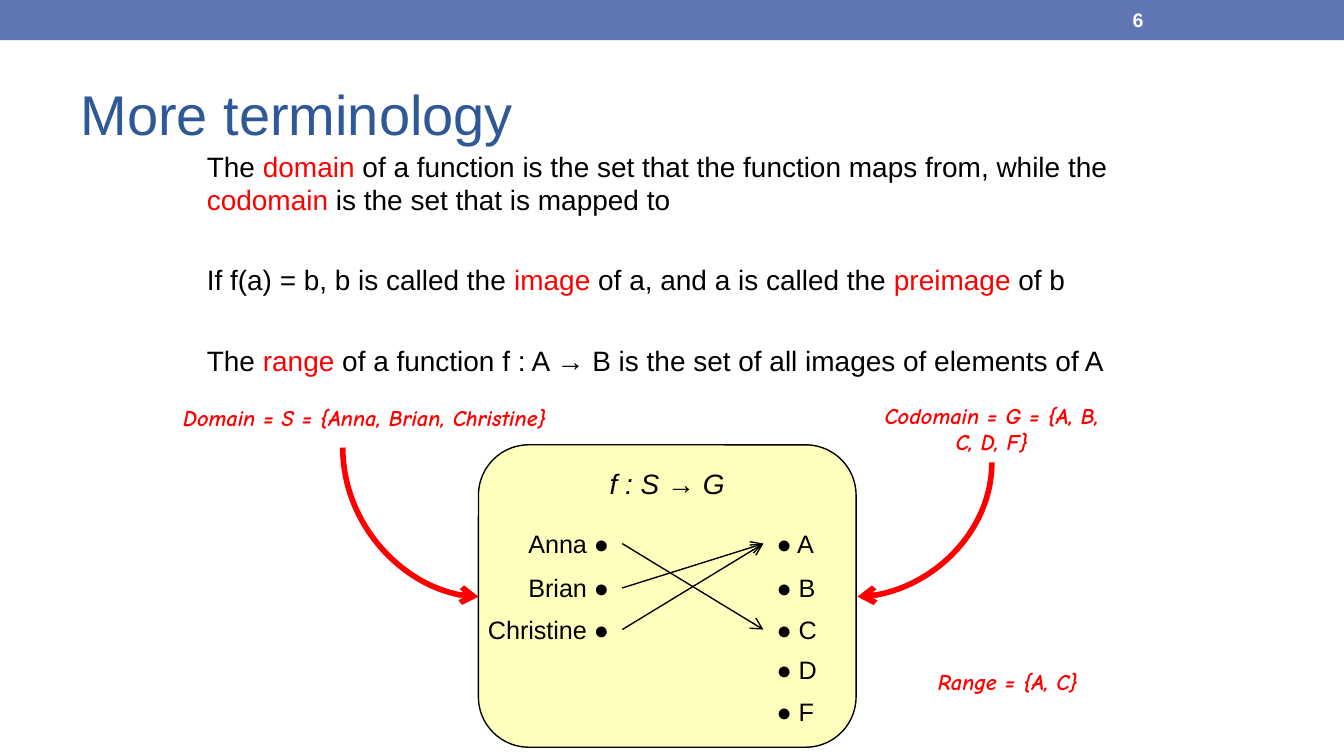
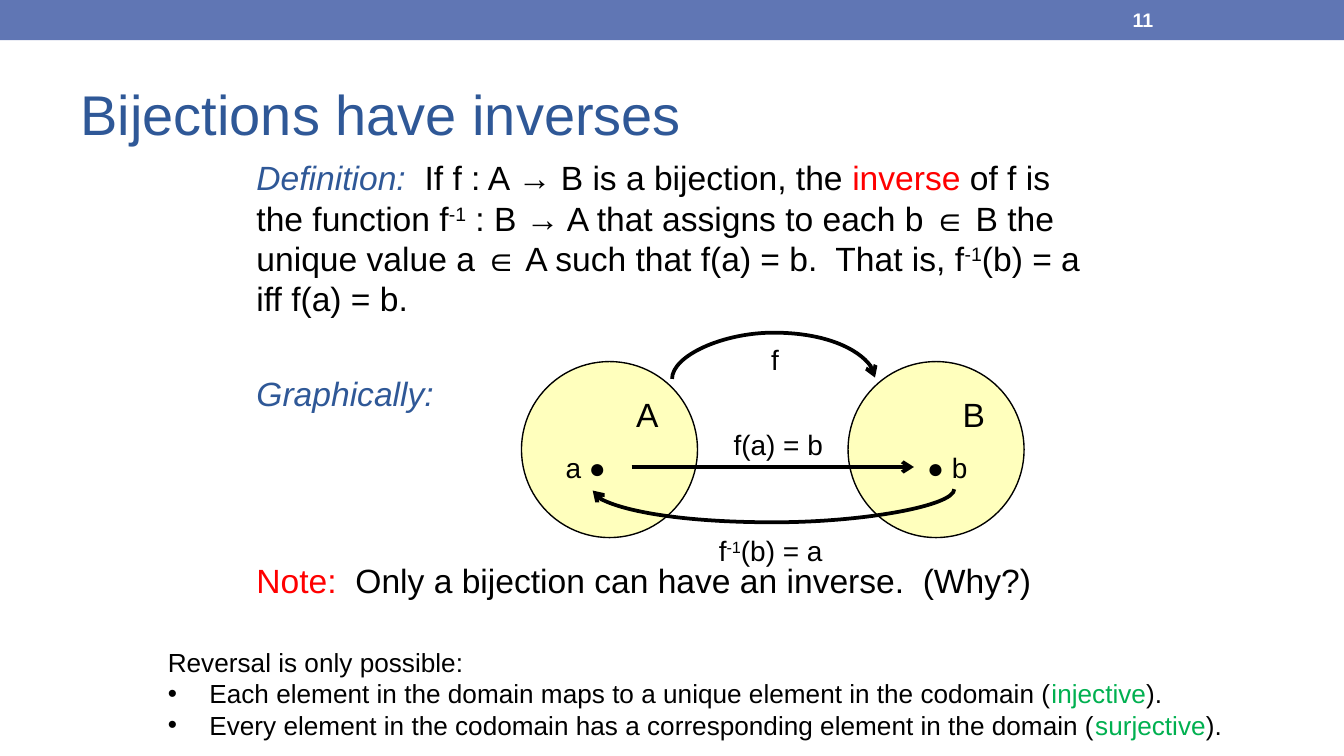
from lxml import etree
from pptx import Presentation
from pptx.dml.color import RGBColor
from pptx.enum.shapes import MSO_CONNECTOR, MSO_SHAPE
from pptx.enum.text import MSO_ANCHOR, MSO_AUTO_SIZE, PP_ALIGN
from pptx.oxml.ns import qn
from pptx.util import Inches, Pt

BLUE = RGBColor(0x2F, 0x58, 0x97)
BAND = RGBColor(0x60, 0x76, 0xB4)
YELLOW = RGBColor(0xFF, 0xFF, 0xBD)
RED = RGBColor(0xFF, 0, 0)
GREEN = RGBColor(0, 0xB0, 0x50)
BLACK = RGBColor(0, 0, 0)
WHITE = RGBColor(0xFF, 0xFF, 0xFF)

SUP = "sup"
TERMS = [
    (3.6, ["The ", ("domain ", RED),
           "of a function is the set that the function maps from, while the ",
           ("codomain ", RED), "is the set that is mapped to"]),
    (25, ["If f(a) = b, b is called the ", ("image ", RED),
          "of a, and a is called the ", ("preimage ", RED), "of b"]),
    (25, ["The ", ("range ", RED),
          "of a function f : A → B is the set of all images of elements of A"]),
]
STUDENTS = [("Anna", 0.89), ("Brian", 0.89), ("Christine", 1.19)]
GRADES = ["A", "B", "C", "D", "F"]
ROW_TOPS = [3.88, 4.21, 4.52, 4.82, 5.13]
MAPPING = [("Anna", "C"), ("Brian", "A"), ("Christine", "A")]
SET_LABELS = [
    ("Domain = S = {Anna, Brian, Christine}", (0.62, 2.96, 4.19, 0.3)),
    ("Codomain = G = {A, B, C, D, F}", (6.44, 2.94, 1.88, 0.5)),
    ("Range = {A, C}", (6.56, 4.92, 1.88, 0.3)),
]

INVERSE = [
    (3.6, [("Definition:  ", BLUE, True), "If f : A → B is a bijection, the ",
           ("inverse ", RED), "of f is the function f", ("-1", SUP),
           " : B → A that assigns to each b ∈ B the unique value a ∈ A "
           "such that f(a) = b.  That is, f", ("-1", SUP), "(b) = a iff f(a) = b."]),
    (29, [("Graphically:", BLUE, True)]),
    (79, [("Note:  ", RED), "Only a bijection can have an inverse.  (Why?)"]),
]
SETS = [("A", 3.88), ("B", 6.31)]
MAP_LABELS = [
    (["f"], (5.64, 2.5, 0.26, 0.35)),
    (["f(a) = b"], (5.36, 3.13, 0.87, 0.35)),
    (["f", ("-1", SUP), "(b) = a"], (5.25, 3.92, 1, 0.35)),
]
REVERSAL = [
    ["Reversal is only possible:"],
    ["Each element in the domain maps to a unique element in the codomain (",
     ("injective", GREEN), ")."],
    ["Every element in the codomain has a corresponding element in the domain (",
     ("surjective", GREEN), ")."],
]


def write(p, parts, size, color=BLACK, font="Arial", bold=False, italic=False,
          align=PP_ALIGN.LEFT):
    p.alignment = align
    f = p.font
    f.name, f.size, f.bold, f.italic = font, Pt(size), bold, italic
    f.color.rgb = color
    for part in parts:
        text, *style = (part,) if isinstance(part, str) else part
        r = p.add_run()
        r.text = text
        if SUP in style:
            r.font._element.set("baseline", "30000")
        elif style:
            r.font.color.rgb = style[0]
            if True in style:
                r.font.italic = True


def add_text(s, box, paragraphs, size, wrap=True, grow=True, **style):
    sp = s.shapes.add_textbox(*map(Inches, box))
    tf = sp.text_frame
    tf.word_wrap = wrap
    tf.auto_size = MSO_AUTO_SIZE.SHAPE_TO_FIT_TEXT if grow else MSO_AUTO_SIZE.NONE
    for i, parts in enumerate(paragraphs):
        p = tf.add_paragraph() if i else tf.paragraphs[0]
        write(p, parts, size, **style)
    return sp


def add_body(s, box, content, size):
    sp = add_text(s, box, [parts for _, parts in content], size, grow=False)
    for p, (before, _) in zip(sp.text_frame.paragraphs, content):
        p.space_before = Pt(before)


def add_set(s, kind, box, label, size, **style):
    sp = s.shapes.add_shape(kind, *map(Inches, box))
    sp.shadow.inherit = False
    sp.fill.solid()
    sp.fill.fore_color.rgb = YELLOW
    sp.line.color.rgb = BLACK
    sp.line.width = Pt(0.75)
    sp.text_frame.vertical_anchor = MSO_ANCHOR.TOP
    write(sp.text_frame.paragraphs[0], [label], size, **style)


def style_arrow(c, color, width):
    c.line.color.rgb = color
    c.line.width = Pt(width)
    etree.SubElement(c.line._get_or_add_ln(), qn("a:tailEnd"), type="arrow")
    etree.SubElement(c._element.spPr, qn("a:effectLst"))


def join(s, source, target, width):
    c = s.shapes.add_connector(MSO_CONNECTOR.STRAIGHT, 0, 0, 0, 0)
    c.begin_connect(source, 3)
    c.end_connect(target, 1)
    style_arrow(c, BLACK, width)


def add_curve(s, start, end, color, width, rot=90, flips=(), depth=None):
    (x1, y1), (x2, y2) = start, end
    w, h = abs(y2 - y1), abs(x2 - x1)
    left, top = (x1 + x2 - w) / 2, (y1 + y2 - h) / 2
    c = s.shapes.add_connector(MSO_CONNECTOR.CURVE,
                               *map(Inches, (left, top, left + w, top + h)))
    sp_pr = c._element.spPr
    xfrm = sp_pr.find(qn("a:xfrm"))
    xfrm.set("rot", str(rot * 60000))
    for flip in flips:
        xfrm.set(flip, "1")
    geom = sp_pr.find(qn("a:prstGeom"))
    if depth is None:
        geom.set("prst", "curvedConnector2")
    else:
        guides = geom.find(qn("a:avLst"))
        if guides is None:
            guides = etree.SubElement(geom, qn("a:avLst"))
        etree.SubElement(guides, qn("a:gd"), name="adj1",
                         fmla=f"val {round(depth / w * 100000)}")
    style_arrow(c, color, width)


def add_band(s, layout):
    band = s.shapes.add_shape(MSO_SHAPE.RECTANGLE, 0, 0, Inches(10), Inches(0.3))
    band.shadow.inherit = False
    band.fill.solid()
    band.fill.fore_color.rgb = BAND
    band.line.fill.background()
    layout.shapes._spTree.insert(2, band._element)


def add_slide(prs, title, number):
    layout = prs.slide_layouts[5]
    s = prs.slides.add_slide(layout)
    if len(prs.slides) == 1:
        add_band(s, layout)
    sp = s.shapes.title
    sp.left, sp.top, sp.width, sp.height = map(Inches, (0.5, 0.44, 9, 0.81))
    sp.text_frame.vertical_anchor = MSO_ANCHOR.MIDDLE
    write(sp.text_frame.paragraphs[0], [title], 30, BLUE)
    page = add_text(s, (8.33, 0.01, 1.17, 0.27), [[number]], 10.5, grow=False,
                    color=WHITE, bold=True)
    page.text_frame.vertical_anchor = MSO_ANCHOR.MIDDLE
    return s


def build_terminology(prs):
    s = add_slide(prs, "More terminology", "6")
    add_body(s, (1.44, 1.06, 7.12, 3.88), TERMS, 15)
    add_set(s, MSO_SHAPE.ROUNDED_RECTANGLE, (3.56, 3.31, 2.81, 2.25),
            "f : S → G", 15, italic=True, align=PP_ALIGN.CENTER)
    students = {
        name: add_text(s, (4.63 - width, top, width, 0.33), [[f"{name} ●"]], 13.5,
                       wrap=False, align=PP_ALIGN.RIGHT)
        for (name, width), top in zip(STUDENTS, ROW_TOPS)}
    grades = {
        grade: add_text(s, (5.68, top, 0.57, 0.33), [[f"● {grade}"]], 13.5, wrap=False)
        for grade, top in zip(GRADES, ROW_TOPS)}
    for name, grade in MAPPING:
        join(s, students[name], grades[grade], 0.75)
    for label, box in SET_LABELS:
        add_text(s, box, [[label]], 12, color=RED, font="Comic Neue", bold=True,
                 italic=True, align=PP_ALIGN.CENTER)
    add_curve(s, (2.55, 3.33), (3.56, 4.44), RED, 3, rot=270, flips=["flipH"])
    add_curve(s, (7.38, 3.44), (6.38, 4.44), RED, 3)


def build_inverses(prs):
    s = add_slide(prs, "Bijections have inverses", "11")
    add_body(s, (1.81, 1.12, 6.35, 3.88), INVERSE, 18)
    for name, left in SETS:
        add_set(s, MSO_SHAPE.OVAL, (left, 2.69, 1.31, 1.31), name, 18,
                align=PP_ALIGN.RIGHT)
    a, b = [add_text(s, (left, 3.3, 0.59, 0.35), [[text]], 15, wrap=False)
            for text, left in (("a ●", 4.11), ("● b", 6.8))]
    join(s, a, b, 2)
    for parts, box in MAP_LABELS:
        add_text(s, box, [parts], 15, wrap=False)
    add_curve(s, (5, 2.82), (6.51, 2.81), BLACK, 2, flips=["flipH", "flipV"], depth=0.35)
    add_curve(s, (7.1, 3.64), (4.41, 3.65), BLACK, 2, depth=0.25)
    sp = add_text(s, (1.15, 4.76, 8.08, 0.81), REVERSAL, 14, wrap=False,
                  align=PP_ALIGN.JUSTIFY)
    for p in sp.text_frame.paragraphs[1:]:
        p_pr = p._p.get_or_add_pPr()
        p_pr.set("marL", str(Inches(0.31)))
        p_pr.set("indent", str(-Inches(0.31)))
        defaults = p_pr.find(qn("a:defRPr"))
        defaults.addprevious(etree.Element(qn("a:buFont"), typeface="Arial"))
        defaults.addprevious(etree.Element(qn("a:buChar"), char="•"))


def main():
    prs = Presentation()
    prs.slide_width = Inches(10)
    prs.slide_height = prs.slide_width * 9 // 16
    build_terminology(prs)
    build_inverses(prs)
    prs.save("out.pptx")


if __name__ == "__main__":
    main()
